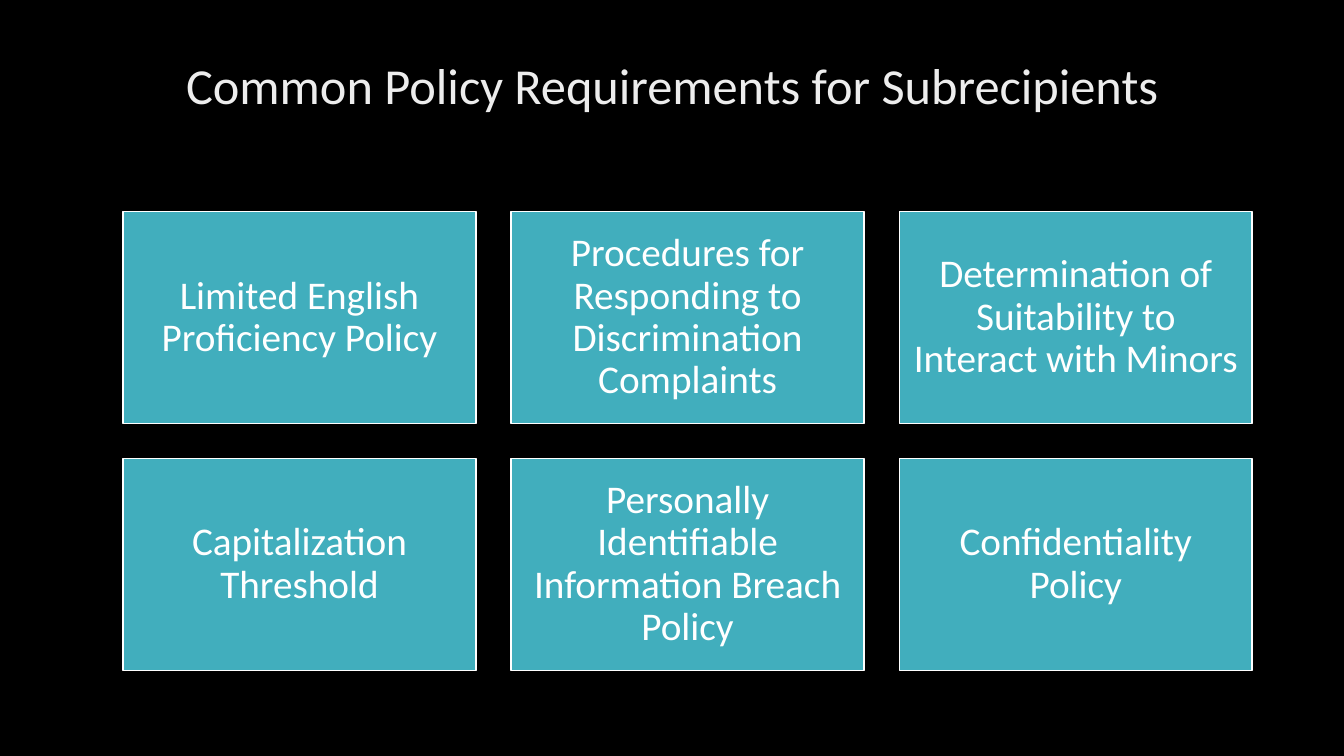
from pptx import Presentation
from pptx.dml.color import RGBColor as RGB
from pptx.enum.shapes import MSO_SHAPE as Shape
from pptx.enum.text import MSO_ANCHOR as Anchor, PP_ALIGN as Align
from pptx.util import Inches, Pt

COLORS = {"back": "000000", "title": "EDEDED", "card": "41AEBD", "white": "FFFFFF"}
POLICIES = [
    "Limited English Proficiency Policy",
    "Procedures for Responding to Discrimination Complaints",
    "Determination of Suitability to Interact with Minors",
    "Capitalization Threshold",
    "Personally Identifiable Information Breach Policy",
    "Confidentiality Policy",
]


def color(name):
    return RGB.from_string(COLORS[name])


def write(frame, text, size, ink):
    frame.word_wrap = True
    para = frame.paragraphs[0]
    para.text = text
    para.alignment = Align.CENTER
    para.line_spacing = 0.9
    para.font.name = "Calibri"
    para.font.size = Pt(size)
    para.font.color.rgb = color(ink)


# Slide and background
deck = Presentation()
deck.slide_width, deck.slide_height = Inches(13.33), Inches(7.5)
slide = deck.slides.add_slide(deck.slide_layouts[5])
slide.background.fill.solid()
slide.background.fill.fore_color.rgb = color("back")

# Title
title = slide.shapes.title
title.left, title.top = Inches(0.92), Inches(0.55)
title.width, title.height = Inches(11.5), Inches(1.45)
write(title.text_frame, "Common Policy Requirements for Subrecipients", 36, "title")
title.text_frame.vertical_anchor = Anchor.TOP

# Policy cards in a grid of three columns
wide, high, gap = 3.5, 2.1, 0.35
for i, policy in enumerate(POLICIES):
    row, col = divmod(i, 3)
    left = 1.22 + col * (wide + gap)
    top = 2.1 + row * (high + gap)
    card = slide.shapes.add_shape(
        Shape.RECTANGLE, Inches(left), Inches(top), Inches(wide), Inches(high))
    card.shadow.inherit = False
    card.fill.solid()
    card.fill.fore_color.rgb = color("card")
    card.line.color.rgb = color("white")
    card.line.width = Pt(1)
    frame = card.text_frame
    frame.margin_left = frame.margin_right = Inches(0.12)
    frame.margin_top = frame.margin_bottom = Inches(0.12)
    frame.vertical_anchor = Anchor.MIDDLE
    write(frame, policy, 28, "white")

deck.save("out.pptx")
